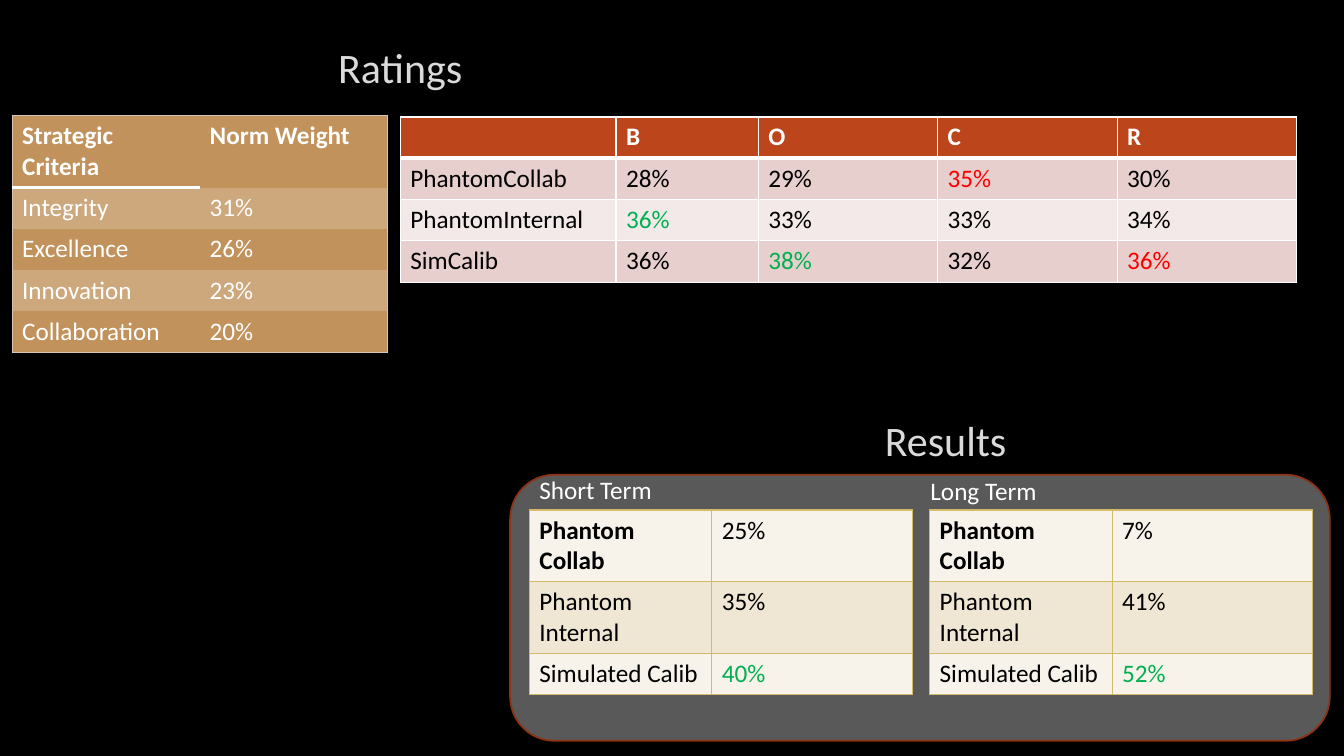
"""Build the slide of ratings and results tables."""
from dataclasses import dataclass, field

from lxml.etree import SubElement
from pptx import Presentation
from pptx.dml.color import RGBColor
from pptx.enum.shapes import MSO_SHAPE
from pptx.enum.text import MSO_ANCHOR, PP_ALIGN
from pptx.oxml.ns import qn
from pptx.slide import Slide
from pptx.table import _Cell
from pptx.util import Inches, Pt

BLACK = RGBColor(0x00, 0x00, 0x00)
WHITE = RGBColor(0xFF, 0xFF, 0xFF)
SILVER = RGBColor(0xDA, 0xDA, 0xDA)
GRAY = RGBColor(0x59, 0x59, 0x59)
RUST = RGBColor(0x8B, 0x33, 0x14)
BRICK = RGBColor(0xBC, 0x45, 0x1B)
ROSE = RGBColor(0xE7, 0xCF, 0xCD)
BLUSH = RGBColor(0xF3, 0xE9, 0xE8)
TAN = RGBColor(0xC1, 0x92, 0x5C)
SAND = RGBColor(0xCD, 0xA8, 0x7D)
STONE = RGBColor(0xD6, 0xC5, 0xB7)
CREAM = RGBColor(0xF7, 0xF3, 0xEB)
WHEAT = RGBColor(0xEF, 0xE7, 0xD4)
GOLD = RGBColor(0xD3, 0xBA, 0x68)
RED = RGBColor(0xFF, 0x00, 0x00)
GREEN = RGBColor(0x00, 0xB0, 0x50)

FONT = "Calibri"
PLAIN_STYLE = "{2D5ABB26-0587-4C30-8999-92F81FD0307C}"


@dataclass
class Label:
    text: str
    left: float
    top: float
    width: float
    height: float
    size: int
    color: RGBColor
    align: PP_ALIGN = PP_ALIGN.LEFT
    anchor: MSO_ANCHOR = MSO_ANCHOR.TOP


@dataclass
class Grid:
    left: float
    top: float
    cols: list[float]
    rows: list[float]
    data: list[list[str]]
    fills: list[RGBColor]
    edge: RGBColor
    edge_width: float
    ink: RGBColor
    head_ink: RGBColor
    bold: set[tuple[int, int]]
    inner: bool = True
    rules: dict[tuple[int, int], float] = field(default_factory=dict)
    tints: dict[tuple[int, int], RGBColor] = field(default_factory=dict)


def add_label(slide: Slide, label: Label) -> None:
    """Draw one text box."""
    box = slide.shapes.add_textbox(Inches(label.left), Inches(label.top),
                                   Inches(label.width), Inches(label.height))
    frame = box.text_frame
    frame.word_wrap = True
    frame.vertical_anchor = label.anchor
    par = frame.paragraphs[0]
    par.text = label.text
    par.alignment = label.align
    par.font.name = FONT
    par.font.size = Pt(label.size)
    par.font.color.rgb = label.color


def add_edge(cell: _Cell, side: str, color: RGBColor, width: float) -> None:
    """Draw one side of a cell, or clear it when the width is zero."""
    line = SubElement(cell._tc.get_or_add_tcPr(), qn(f"a:ln{side}"), w=str(Pt(width)))
    if width:
        SubElement(SubElement(line, qn("a:solidFill")), qn("a:srgbClr"), val=str(color))
    else:
        SubElement(line, qn("a:noFill"))


def add_grid(slide: Slide, grid: Grid) -> None:
    """Draw one table with its fills, edges and text."""
    last_row, last_col = len(grid.rows) - 1, len(grid.cols) - 1
    frame = slide.shapes.add_table(len(grid.rows), len(grid.cols),
                                   Inches(grid.left), Inches(grid.top),
                                   Inches(sum(grid.cols)), Inches(sum(grid.rows)))
    table = frame.table
    table.first_row = table.horz_banding = False
    table._tbl.tblPr.find(qn("a:tableStyleId")).text = PLAIN_STYLE
    for col, width in zip(table.columns, grid.cols):
        col.width = Inches(width)
    for row, height in zip(table.rows, grid.rows):
        row.height = Inches(height)
    for r, texts in enumerate(grid.data):
        for c, text in enumerate(texts):
            cell = table.cell(r, c)
            outer = {"L": c == 0, "R": c == last_col, "T": r == 0, "B": r == last_row}
            for side, shown in outer.items():
                width = grid.edge_width if shown or grid.inner else 0
                color = grid.edge
                rule = grid.rules.get((r if side == "B" else r - 1, c))
                if side in "TB" and rule:
                    color, width = WHITE, rule
                add_edge(cell, side, color, width)
            cell.fill.solid()
            cell.fill.fore_color.rgb = grid.fills[r]
            par = cell.text_frame.paragraphs[0]
            par.text = text
            par.font.name = FONT
            par.font.size = Pt(18)
            par.font.bold = (r, c) in grid.bold
            base = grid.head_ink if r == 0 else grid.ink
            par.font.color.rgb = grid.tints.get((r, c), base)


def make_result(left: float, shares: list[str]) -> Grid:
    """Describe one table of results."""
    names = ["Phantom Collab", "Phantom Internal", "Simulated Calib"]
    return Grid(left, 5.06, [1.81, 1.99], [0.71, 0.71, 0.41],
                [list(pair) for pair in zip(names, shares)],
                [CREAM, WHEAT, CREAM], GOLD, 1, BLACK, BLACK, {(0, 0)},
                tints={(2, 1): GREEN})


RATINGS = Grid(
    3.97, 1.16, [2.14, 1.41, 1.78, 1.78, 1.78], [0.41] * 4,
    [["", "B", "O", "C", "R"],
     ["PhantomCollab", "28%", "29%", "35%", "30%"],
     ["PhantomInternal", "36%", "33%", "33%", "34%"],
     ["SimCalib", "36%", "38%", "32%", "36%"]],
    [BRICK, ROSE, BLUSH, ROSE], WHITE, 1, BLACK, WHITE,
    {(0, c) for c in range(5)}, rules={(0, c): 3 for c in range(5)},
    tints={(1, 3): RED, (2, 1): GREEN, (3, 2): GREEN, (3, 4): RED})

WEIGHTS = Grid(
    0.12, 1.15, [1.86, 1.86], [0.71] + [0.41] * 4,
    [["Strategic Criteria", "Norm Weight"], ["Integrity", "31%"],
     ["Excellence", "26%"], ["Innovation", "23%"], ["Collaboration", "20%"]],
    [TAN, SAND, TAN, SAND, TAN], STONE, 0.75, WHITE, WHITE,
    {(0, 0), (0, 1)}, inner=False, rules={(0, 0): 2})

GRIDS = [RATINGS, WEIGHTS, make_result(5.25, ["25%", "35%", "40%"]),
         make_result(9.22, ["7%", "41%", "52%"])]

LABELS = [
    Label("Ratings", 1.72, 0.13, 4.5, 1.06, 30, SILVER, PP_ALIGN.CENTER, MSO_ANCHOR.MIDDLE),
    Label("Short Term", 5.25, 4.66, 1.41, 0.4, 18, WHITE),
    Label("Long Term", 9.13, 4.67, 1.4, 0.4, 18, WHITE),
    Label("Results", 7.13, 3.83, 4.5, 1.06, 30, SILVER, PP_ALIGN.CENTER, MSO_ANCHOR.MIDDLE),
]


def add_panel(slide: Slide) -> None:
    """Draw the rounded panel behind the results."""
    panel = slide.shapes.add_shape(MSO_SHAPE.ROUNDED_RECTANGLE, Inches(5.06),
                                   Inches(4.71), Inches(8.13), Inches(2.64))
    panel.shadow.inherit = False
    panel.fill.solid()
    panel.fill.fore_color.rgb = GRAY
    panel.line.color.rgb = RUST
    panel.line.width = Pt(1.25)


def main() -> None:
    """Build and save the slide."""
    deck = Presentation()
    deck.slide_width, deck.slide_height = Inches(13.33), Inches(7.5)
    slide = deck.slides.add_slide(deck.slide_layouts[6])
    slide.background.fill.solid()
    slide.background.fill.fore_color.rgb = BLACK
    add_panel(slide)
    for grid in GRIDS:
        add_grid(slide, grid)
    for label in LABELS:
        add_label(slide, label)
    deck.save("out.pptx")


if __name__ == "__main__":
    main()
